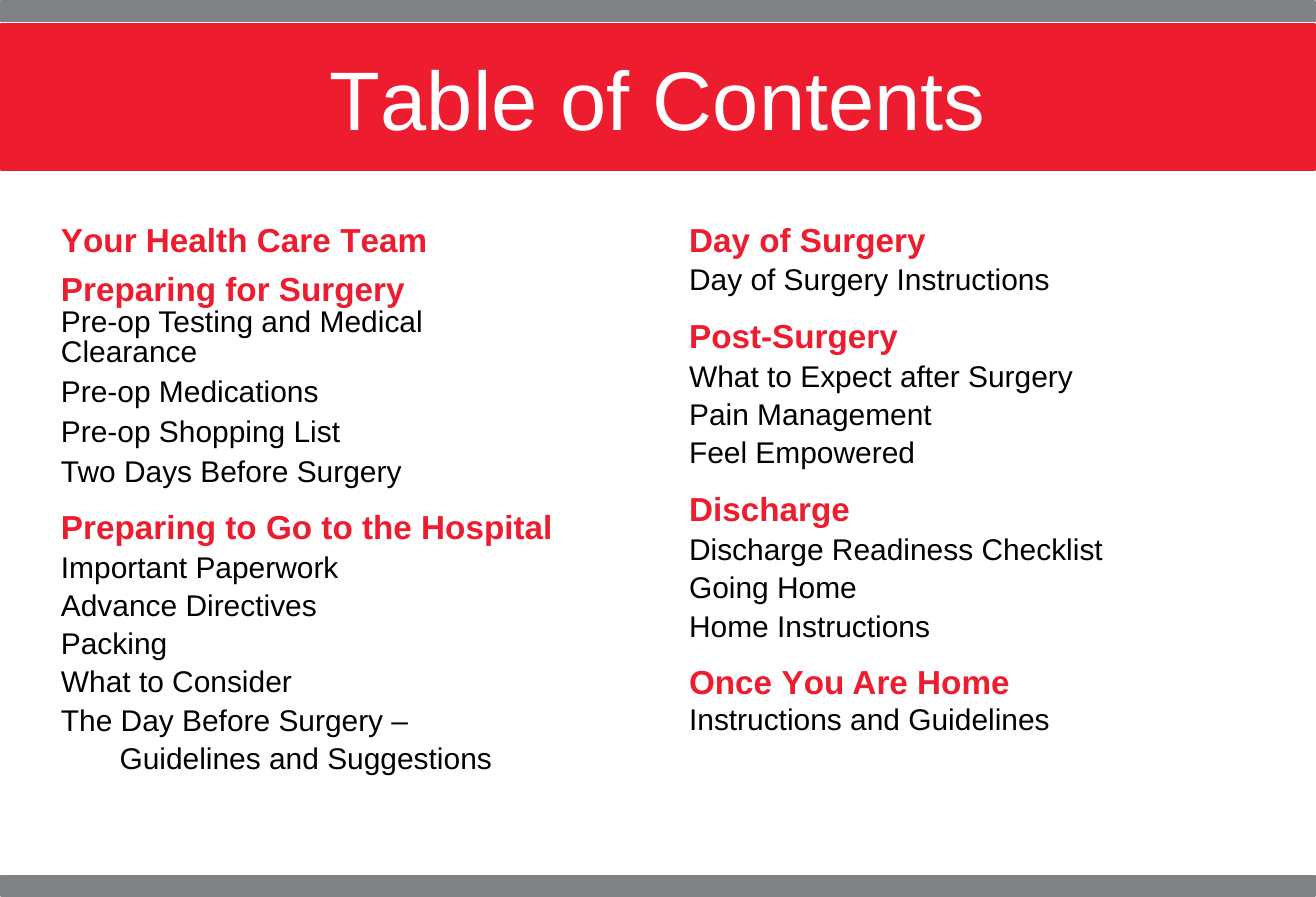
"""Build a table of contents slide with two columns of headed entries."""
from itertools import groupby

from pptx import Presentation
from pptx.dml.color import RGBColor
from pptx.enum.shapes import MSO_SHAPE
from pptx.enum.text import MSO_ANCHOR, MSO_AUTO_SIZE, PP_ALIGN
from pptx.util import Inches, Pt

RED = RGBColor(0xED, 0x1C, 0x2E)
GREY = RGBColor(0x80, 0x82, 0x85)
BLACK = RGBColor(0, 0, 0)
WHITE = RGBColor(255, 255, 255)
RECTANGLE = MSO_SHAPE.RECTANGLE
TOP = MSO_ANCHOR.TOP
NO_AUTOFIT = MSO_AUTO_SIZE.NONE
LEFT, CENTER = PP_ALIGN.LEFT, PP_ALIGN.CENTER

TITLE = "Table of Contents"
TIGHT_LETTERS = "TY"
HEADING = {"size": Pt(20), "bold": True, "color": RED, "tracking": -160}
ENTRY = {"size": Pt(18), "bold": False, "color": BLACK, "tracking": 0}
TITLE_FONT = {"size": Pt(50), "bold": False, "color": WHITE, "tracking": -550}

NATURAL = {"line_spacing": 1.0}
LOOSE = {"line_spacing": Pt(23)}
FIRST_LOOSE = {"line_spacing": Pt(23), "space_before": Pt(0.4)}
SPACED = {"line_spacing": Pt(18), "space_after": Pt(6)}
SECTION = {"line_spacing": 1.0, "space_before": Pt(10.8)}

LEFT_COLUMN = [
    ("Your Health Care Team", HEADING, NATURAL),
    ("Preparing for Surgery", HEADING, {"line_spacing": 1.0, "space_before": Pt(6)}),
    ("Pre-op Testing and Medical\vClearance", ENTRY, SPACED),
    ("Pre-op Medications", ENTRY, SPACED),
    ("Pre-op Shopping List", ENTRY, SPACED),
    ("Two Days Before Surgery", ENTRY, {"line_spacing": Pt(18)}),
    ("Preparing to Go to the Hospital", HEADING,
     {"line_spacing": Pt(23), "space_before": Pt(12)}),
    ("Important Paperwork", ENTRY, LOOSE),
    ("Advance Directives", ENTRY, LOOSE),
    ("Packing", ENTRY, LOOSE),
    ("What to Consider", ENTRY, LOOSE),
    ("The Day Before Surgery –", ENTRY, LOOSE),
    ("Guidelines and Suggestions", ENTRY, {"line_spacing": Pt(23), "indent": Inches(0.49)}),
]
RIGHT_COLUMN = [
    ("Day of Surgery", HEADING, NATURAL),
    ("Day of Surgery Instructions", ENTRY, LOOSE),
    ("Post-Surgery", HEADING, SECTION),
    ("What to Expect after Surgery", ENTRY, FIRST_LOOSE),
    ("Pain Management", ENTRY, LOOSE),
    ("Feel Empowered", ENTRY, LOOSE),
    ("Discharge", HEADING, SECTION),
    ("Discharge Readiness Checklist", ENTRY, FIRST_LOOSE),
    ("Going Home", ENTRY, LOOSE),
    ("Home Instructions", ENTRY, LOOSE),
    ("Once You Are Home", HEADING, SECTION),
    ("Instructions and Guidelines", ENTRY, NATURAL),
]
COLUMNS = [(0.51, 5.57, LEFT_COLUMN), (5.76, 4.05, RIGHT_COLUMN)]
COLUMN_TOP, COLUMN_HEIGHT = 1.83, 4.58
BANDS = [(0.2, 1.22, RED), (0.01, 0.17, GREY), (7.32, 0.17, GREY)]


def set_values(target, values):
    for name, value in values.items():
        setattr(target, name, value)


def prepare_frame(frame):
    set_values(frame, {
        "margin_left": 0, "margin_right": 0, "margin_top": 0, "margin_bottom": 0,
        "word_wrap": True, "auto_size": NO_AUTOFIT, "vertical_anchor": TOP,
    })


def write_paragraph(paragraph, text, style, layout, alignment=LEFT):
    spacing = {"space_before": Pt(0), "space_after": Pt(0), "alignment": alignment, **layout}
    indent = spacing.pop("indent", 0)
    set_values(paragraph, spacing)
    if indent:
        paragraph._p.get_or_add_pPr().set("marL", str(indent))
    for line_number, line in enumerate(text.split("\v")):
        if line_number:
            paragraph.add_line_break()
        for tight, letters in groupby(line, lambda letter: letter in TIGHT_LETTERS):
            run = paragraph.add_run()
            run.text = "".join(letters)
            set_values(run.font, {"name": "Arial", "size": style["size"], "bold": style["bold"]})
            run.font.color.rgb = style["color"]
            if tight and style["tracking"]:
                run.font._element.set("spc", str(style["tracking"]))


def add_band(slide, top, height, color):
    band = slide.shapes.add_shape(
        RECTANGLE, Inches(0.01), Inches(top), Inches(10.98), Inches(height))
    band.shadow.inherit = False
    band.fill.solid()
    band.fill.fore_color.rgb = color
    band.line.color.rgb = color
    band.line.width = Pt(1)


def add_column(slide, left, width, entries):
    column = slide.shapes.add_textbox(
        Inches(left), Inches(COLUMN_TOP), Inches(width), Inches(COLUMN_HEIGHT))
    frame = column.text_frame
    prepare_frame(frame)
    for number, (text, style, layout) in enumerate(entries):
        paragraph = frame.add_paragraph() if number else frame.paragraphs[0]
        write_paragraph(paragraph, text, style, layout)


def place_title(slide):
    title = slide.shapes.title
    set_values(title, {"left": Inches(0.63), "top": Inches(0.4),
                       "width": Inches(9.74), "height": Inches(0.81)})
    prepare_frame(title.text_frame)
    write_paragraph(title.text_frame.paragraphs[0], TITLE, TITLE_FONT, NATURAL, CENTER)
    slide.shapes._spTree.append(title._element)


def main():
    presentation = Presentation()
    set_values(presentation, {"slide_width": Inches(11), "slide_height": Inches(7.5)})
    slide = presentation.slides.add_slide(presentation.slide_layouts[5])
    for left, width, entries in COLUMNS:
        add_column(slide, left, width, entries)
    for top, height, color in BANDS:
        add_band(slide, top, height, color)
    place_title(slide)
    presentation.save("out.pptx")


if __name__ == "__main__":
    main()
